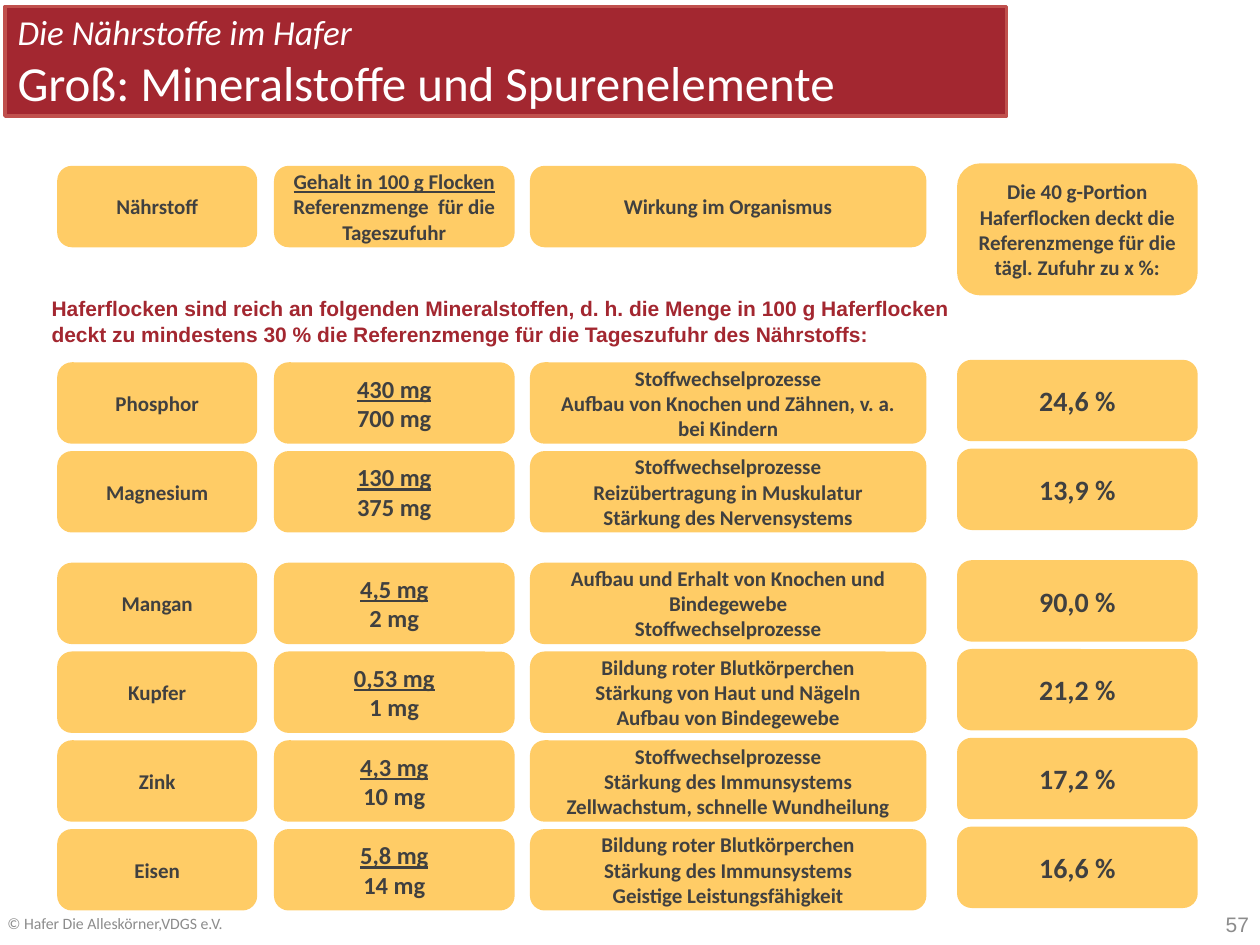
from pptx import Presentation
from pptx.dml.color import RGBColor
from pptx.enum.shapes import MSO_SHAPE
from pptx.enum.text import MSO_ANCHOR, MSO_AUTO_SIZE, PP_ALIGN
from pptx.util import Cm, Pt

RED, GOLD, DARK, GREY = "A32730", "FFCC66", "404040", "8C8C8C"
COLS = [(1.19, 3.96), (5.56, 4.78), (10.72, 7.92), (19.33, 4.78)]
HIGH, STEP = 1.57, 1.79
LIFT = 0.05  # the share column sits slightly above the others

HEADS = [
    ["Nährstoff"],
    ["Gehalt in 100 g Flocken", "Referenzmenge  für die Tageszufuhr"],
    ["Wirkung im Organismus"],
]
SHARE = ["Die 40 g-Portion Haferflocken deckt die Referenzmenge für die "
         "tägl. Zufuhr zu x %:"]
INTRO = ("Haferflocken sind reich an folgenden Mineralstoffen, d. h. die Menge "
         "in 100 g Haferflocken deckt zu mindestens 30 % die Referenzmenge für "
         "die Tageszufuhr des Nährstoffs:")
GROUPS = [
    (7.34, [
        ("Phosphor", ["430 mg", "700 mg"],
         ["Stoffwechselprozesse",
          "Aufbau von Knochen und Zähnen, v. a. bei Kindern"], "24,6 %"),
        ("Magnesium", ["130 mg", "375 mg"],
         ["Stoffwechselprozesse", "Reizübertragung in Muskulatur",
          "Stärkung des Nervensystems"], "13,9 %"),
    ]),
    (11.38, [
        ("Mangan", ["4,5 mg", "2 mg"],
         ["Aufbau und Erhalt von Knochen und Bindegewebe",
          "Stoffwechselprozesse"], "90,0 %"),
        ("Kupfer", ["0,53 mg", "1 mg"],
         ["Bildung roter Blutkörperchen", "Stärkung von Haut und Nägeln",
          "Aufbau von Bindegewebe"], "21,2 %"),
        ("Zink", ["4,3 mg", "10 mg"],
         ["Stoffwechselprozesse", "Stärkung des Immunsystems",
          "Zellwachstum, schnelle Wundheilung"], "17,2 %"),
        ("Eisen", ["5,8 mg", "14 mg"],
         ["Bildung roter Blutkörperchen", "Stärkung des Immunsystems",
          "Geistige Leistungsfähigkeit"], "16,6 %"),
    ]),
]


def color(code):
    return RGBColor.from_string(code)


def paint(shape, fill, line):
    shape.fill.solid()
    shape.fill.fore_color.rgb = color(fill)
    shape.line.color.rgb = color(line)
    shape.line.width = Pt(2)


def write(frame, text, size=12, tone=DARK, face="Calibri", bold=False,
          italic=False, under=False, align=PP_ALIGN.LEFT):
    """Fill the empty first paragraph of the frame, or add a further one."""
    para = frame.paragraphs[0]
    if para.runs:
        para = frame.add_paragraph()
    para.alignment = align
    run = para.add_run()
    run.text = text
    font = run.font
    font.size, font.name, font.color.rgb = Pt(size), face, color(tone)
    font.bold, font.italic, font.underline = bold, italic, under


def place(shape, left, top, width, height):
    shape.left, shape.top = Cm(left), Cm(top)
    shape.width, shape.height = Cm(width), Cm(height)


def title(slide):
    shape = slide.shapes.title
    place(shape, 0.1, 0.13, 20.19, 2.21)
    paint(shape, RED, "C0504D")
    frame = shape.text_frame
    frame.auto_size = MSO_AUTO_SIZE.NONE
    frame.vertical_anchor = MSO_ANCHOR.MIDDLE
    write(frame, "Die Nährstoffe im Hafer", size=20, tone="FFFFFF", italic=True)
    write(frame, "Groß: Mineralstoffe und Spurenelemente", size=28, tone="FFFFFF")


def label(slide, text, left, top, width, height, anchor=MSO_ANCHOR.MIDDLE, **style):
    frame = slide.shapes.add_textbox(
        Cm(left), Cm(top), Cm(width), Cm(height)).text_frame
    frame.word_wrap = True
    frame.vertical_anchor = anchor
    write(frame, text, **style)


def card(slide, col, top, lines, size=12, ratio=False, height=HIGH):
    """Draw one rounded cell; ratio underlines its first line like a fraction."""
    left, width = COLS[col]
    shape = slide.shapes.add_shape(
        MSO_SHAPE.ROUNDED_RECTANGLE, Cm(left), Cm(top), Cm(width), Cm(height))
    shape.shadow.inherit = False
    paint(shape, GOLD, GOLD)
    frame = shape.text_frame
    frame.word_wrap = True
    frame.vertical_anchor = MSO_ANCHOR.MIDDLE
    for i, line in enumerate(lines):
        write(frame, line, size=size, bold=True, under=ratio and i == 0,
              align=PP_ALIGN.CENTER)


def heads(slide):
    top = 3.38
    for col, lines in enumerate(HEADS):
        card(slide, col, top, lines, ratio=col == 1)
    card(slide, 3, top - LIFT, SHARE, height=2.59)


def rows(slide):
    for start, group in GROUPS:
        for i, (name, amounts, effects, share) in enumerate(group):
            top = start + i * STEP
            card(slide, 0, top, [name])
            card(slide, 1, top, amounts, size=14, ratio=True)
            card(slide, 2, top, effects)
            card(slide, 3, top - LIFT, [share], size=16)


def main():
    deck = Presentation()
    deck.slide_width, deck.slide_height = Cm(25.4), Cm(19.05)
    slide = deck.slides.add_slide(deck.slide_layouts[5])
    title(slide)
    heads(slide)
    label(slide, INTRO, 0.79, 5.84, 18.9, 1.3, anchor=MSO_ANCHOR.TOP,
          tone=RED, face="Arial", bold=True)
    rows(slide)
    label(slide, "© Hafer Die Alleskörner,VDGS e.V.", -0.1, 18.11, 15.52, 1.02,
          size=9, tone=GREY)
    label(slide, "57", 19.51, 18.11, 5.92, 1.02, tone=GREY, face="Arial",
          align=PP_ALIGN.RIGHT)
    deck.save("out.pptx")


if __name__ == "__main__":
    main()
